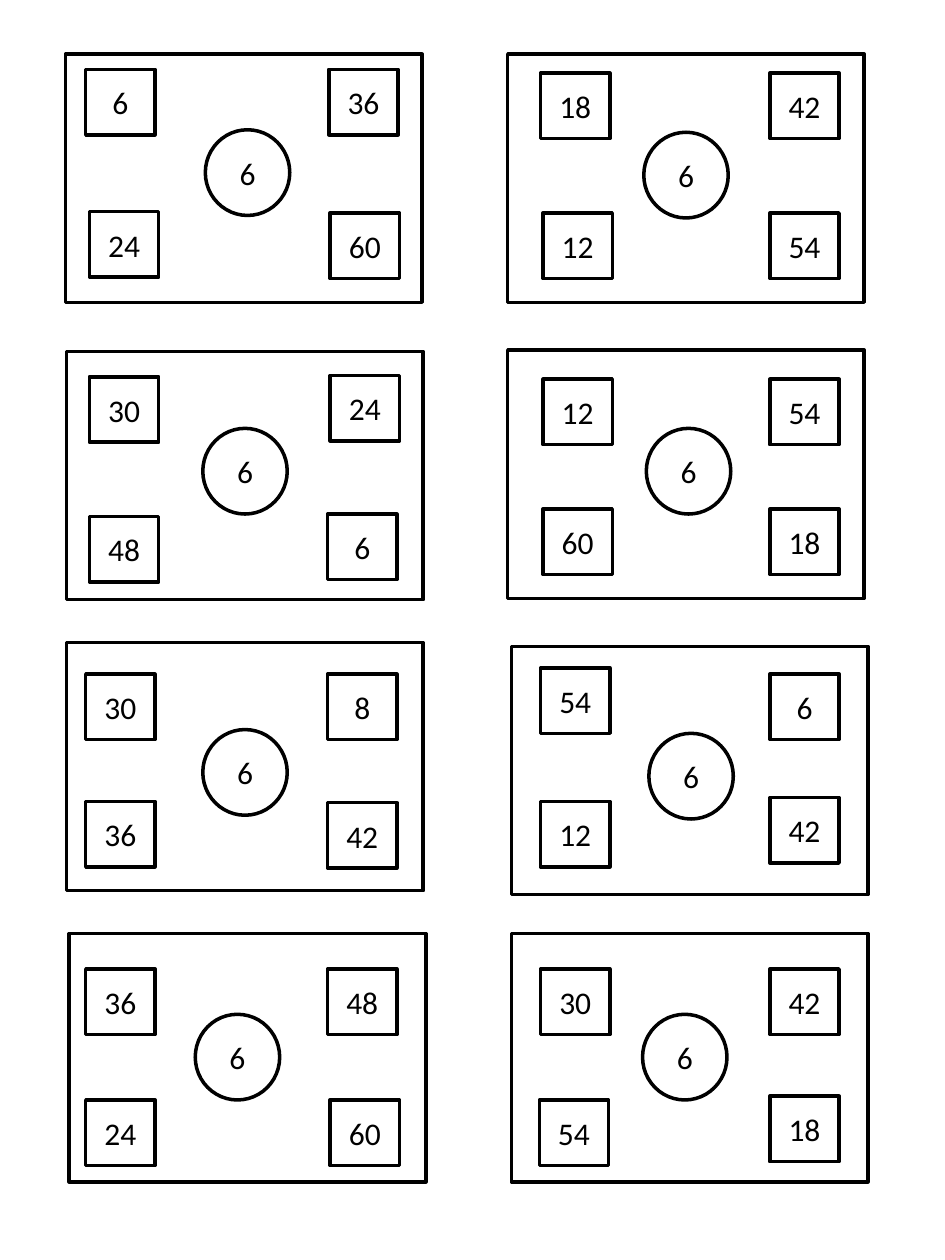
from pptx import Presentation
from pptx.dml.color import RGBColor
from pptx.enum.shapes import MSO_SHAPE
from pptx.enum.text import MSO_ANCHOR, PP_ALIGN
from pptx.util import Inches, Pt

BLACK = RGBColor(0x00, 0x00, 0x00)
WHITE = RGBColor(0xFF, 0xFF, 0xFF)

CARD_SIZE = (2.83, 1.97)
TILE_SIZE = (0.55, 0.52)
CIRCLE_SIZE = (0.67, 0.68)
FACTOR = "6"

# Card corner, circle offset, then each tile's number and offset in the card:
# top left, top right, bottom left, bottom right.
CARDS = [
    ((0.52, 0.43), (1.11, 0.60),
     [("6", 0.16, 0.12), ("36", 2.09, 0.12), ("24", 0.19, 1.25), ("60", 2.10, 1.26)]),
    ((4.03, 0.43), (1.08, 0.62),
     [("18", 0.26, 0.15), ("42", 2.08, 0.15), ("12", 0.28, 1.26), ("54", 2.08, 1.26)]),
    ((0.53, 2.79), (1.08, 0.61),
     [("30", 0.18, 0.20), ("24", 2.09, 0.19), ("48", 0.18, 1.31), ("6", 2.07, 1.29)]),
    ((4.03, 2.78), (1.10, 0.62),
     [("12", 0.28, 0.23), ("54", 2.08, 0.23), ("60", 0.28, 1.26), ("18", 2.08, 1.26)]),
    ((0.53, 5.10), (1.08, 0.69),
     [("30", 0.15, 0.25), ("8", 2.07, 0.25), ("36", 0.15, 1.26), ("42", 2.07, 1.27)]),
    ((4.06, 5.13), (1.09, 0.69),
     [("54", 0.23, 0.17), ("6", 2.05, 0.22), ("12", 0.23, 1.23), ("42", 2.05, 1.20)]),
    ((0.55, 7.41), (1.00, 0.64),
     [("36", 0.13, 0.28), ("48", 2.05, 0.28), ("24", 0.13, 1.32), ("60", 2.07, 1.32)]),
    ((4.06, 7.41), (1.04, 0.64),
     [("30", 0.23, 0.28), ("42", 2.05, 0.28), ("54", 0.22, 1.32), ("18", 2.05, 1.29)]),
]


def write_text(shape, text, size=18, font="Calibri", color=BLACK, align=PP_ALIGN.CENTER):
    frame = shape.text_frame
    frame.word_wrap = True
    frame.vertical_anchor = MSO_ANCHOR.MIDDLE
    paragraph = frame.paragraphs[0]
    paragraph.alignment = align
    run = paragraph.add_run()
    run.text = text
    run.font.size = Pt(size)
    run.font.name = font
    run.font.color.rgb = color


def add_outlined(slide, kind, left, top, size):
    shape = slide.shapes.add_shape(
        kind, Inches(left), Inches(top), Inches(size[0]), Inches(size[1]))
    shape.shadow.inherit = False
    shape.fill.solid()
    shape.fill.fore_color.rgb = WHITE
    shape.line.color.rgb = BLACK
    shape.line.width = Pt(2)
    return shape


def add_card(slide, corner, circle_offset, tiles):
    """Draw a card with its factor in the circle and a number in each corner tile."""
    left, top = corner
    add_outlined(slide, MSO_SHAPE.RECTANGLE, left, top, CARD_SIZE)
    for number, dx, dy in tiles:
        tile = add_outlined(slide, MSO_SHAPE.RECTANGLE, left + dx, top + dy, TILE_SIZE)
        write_text(tile, number)
    dx, dy = circle_offset
    circle = add_outlined(slide, MSO_SHAPE.OVAL, left + dx, top + dy, CIRCLE_SIZE)
    write_text(circle, FACTOR)


def main():
    deck = Presentation()
    deck.slide_width, deck.slide_height = Inches(7.5), Inches(10)
    slide = deck.slides.add_slide(deck.slide_layouts[6])
    for corner, circle_offset, tiles in CARDS:
        add_card(slide, corner, circle_offset, tiles)
    deck.save("out.pptx")


if __name__ == "__main__":
    main()
